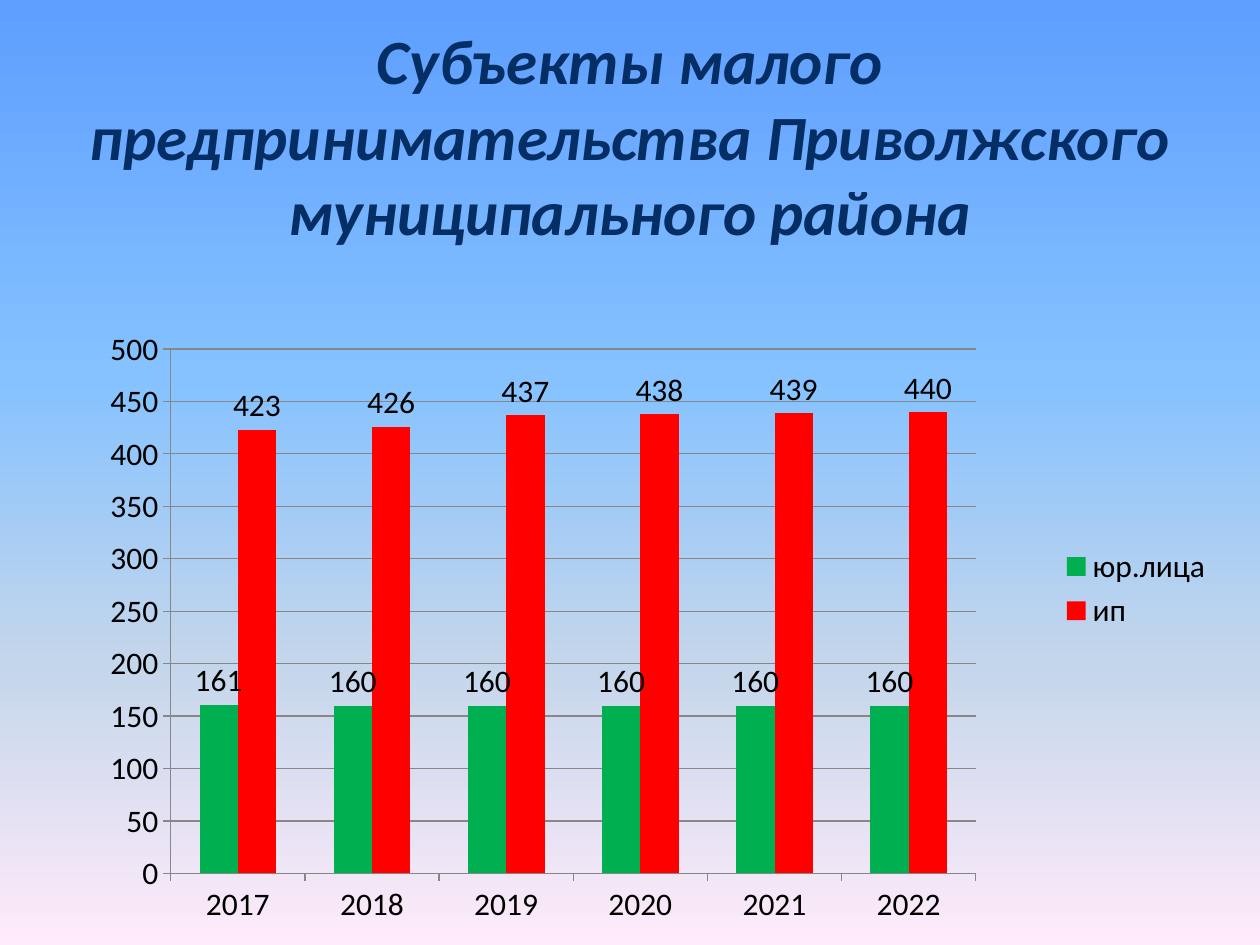
import copy

import pptx
import pptx.chart.data
import pptx.dml.color
import pptx.enum.chart
import pptx.enum.text
import pptx.oxml
import pptx.oxml.ns
import pptx.util

RGBColor = pptx.dml.color.RGBColor
PX = pptx.util.Inches(1) / 126
FONT = "Calibri"

NAVY = RGBColor(0x05, 0x2E, 0x65)
BLACK = RGBColor(0x00, 0x00, 0x00)
GRAY = RGBColor(0x87, 0x87, 0x87)
GREEN = RGBColor(0x00, 0xB0, 0x50)
RED = RGBColor(0xFF, 0x00, 0x00)
SKY = [
    (0, RGBColor(0x5E, 0x9E, 0xFF)),
    (40, RGBColor(0x85, 0xC2, 0xFF)),
    (70, RGBColor(0xC4, 0xD6, 0xEB)),
    (100, RGBColor(0xFF, 0xEB, 0xFA)),
]

YEARS = ["2017", "2018", "2019", "2020", "2021", "2022"]
ENTITIES = [
    ("юр.лица", GREEN, [161, 160, 160, 160, 160, 160]),
    ("ип", RED, [423, 426, 437, 438, 439, 440]),
]
PLOT_AREA = {"x": 0.114, "y": 0.141, "w": 0.676, "h": 0.786}


def emu(*lengths):
    return [round(length * PX) for length in lengths]


def paint_background(slide):
    fill = slide.background.fill
    fill.gradient()
    fill.gradient_angle = 270
    stop_list = slide.element.find(".//" + pptx.oxml.ns.qn("a:gsLst"))
    while len(stop_list) < len(SKY):
        stop_list.append(copy.deepcopy(stop_list[0]))
    for stop, (percent, color) in zip(fill.gradient_stops, SKY):
        stop.position = percent / 100
        stop.color.rgb = color


def add_title(slide, box):
    frame = slide.shapes.add_textbox(*emu(*box)).text_frame
    frame.word_wrap = True
    frame.vertical_anchor = pptx.enum.text.MSO_ANCHOR.MIDDLE
    heading = frame.paragraphs[0]
    heading.text = "Субъекты малого предпринимательства Приволжского муниципального района"
    heading.alignment = pptx.enum.text.PP_ALIGN.CENTER
    heading.font.name = FONT
    heading.font.size = pptx.util.Pt(36)
    heading.font.bold = heading.font.italic = True
    heading.font.color.rgb = NAVY


def fix_plot_area(chart):
    """Set the inner plot area as fractions of the chart."""
    plot_area = chart.plots[0]._element.getparent()
    for old in plot_area.findall(pptx.oxml.ns.qn("c:layout")):
        plot_area.remove(old)
    modes = "".join(f'<c:{side}Mode val="edge"/>' for side in "xy")
    sizes = "".join(f'<c:{side} val="{part}"/>' for side, part in PLOT_AREA.items())
    plot_area.insert(0, pptx.oxml.parse_xml(
        f'<c:layout {pptx.oxml.ns.nsdecls("c")}><c:manualLayout>'
        f'<c:layoutTarget val="inner"/>{modes}{sizes}'
        "</c:manualLayout></c:layout>"))


def style_axes(chart):
    values = chart.value_axis
    values.minimum_scale, values.maximum_scale, values.major_unit = 0, 500, 50
    values.has_major_gridlines = True
    for line in (values.major_gridlines.format.line, values.format.line,
                 chart.category_axis.format.line):
        line.color.rgb = GRAY
        line.width = pptx.util.Pt(0.75)
    for axis in (values, chart.category_axis):
        axis.major_tick_mark = pptx.enum.chart.XL_TICK_MARK.OUTSIDE
        axis.minor_tick_mark = pptx.enum.chart.XL_TICK_MARK.NONE


def add_business_chart(slide, box):
    counts = pptx.chart.data.CategoryChartData()
    counts.categories = YEARS
    for name, _, values in ENTITIES:
        counts.add_series(name, values)
    chart = slide.shapes.add_chart(
        pptx.enum.chart.XL_CHART_TYPE.COLUMN_CLUSTERED, *emu(*box), counts).chart
    chart.has_title = False
    chart.font.name = FONT
    chart.font.size = pptx.util.Pt(18)
    chart.font.color.rgb = BLACK
    chart.has_legend = True
    chart.legend.position = pptx.enum.chart.XL_LEGEND_POSITION.RIGHT
    chart.legend.include_in_layout = False

    columns = chart.plots[0]
    columns.gap_width = 150
    columns.overlap = 0
    columns.vary_by_categories = False
    for series, (_, color, _) in zip(columns.series, ENTITIES):
        series.format.fill.solid()
        series.format.fill.fore_color.rgb = color
        series.invert_if_negative = False
        series.data_labels.show_value = True
        series.data_labels.position = pptx.enum.chart.XL_LABEL_POSITION.OUTSIDE_END
    style_axes(chart)
    fix_plot_area(chart)


def main():
    deck = pptx.Presentation()
    deck.slide_width, deck.slide_height = emu(1260, 945)
    slide = deck.slides.add_slide(deck.slide_layouts[6])
    paint_background(slide)
    add_title(slide, (63, 16, 1134, 238))
    add_business_chart(slide, (35, 255, 1191, 669))
    deck.save("out.pptx")


if __name__ == "__main__":
    main()
